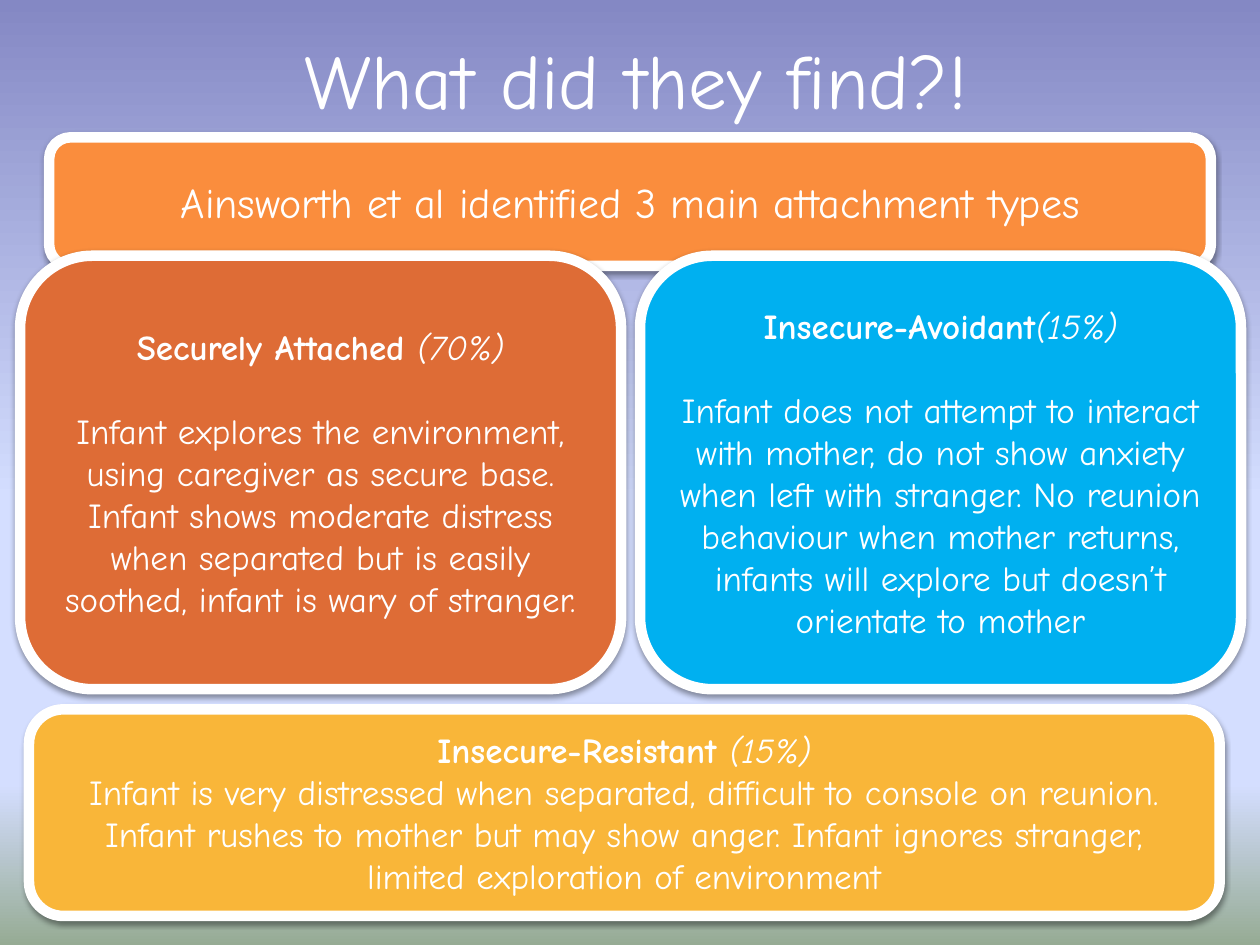
from lxml.etree import SubElement
from pptx import Presentation
from pptx.dml.color import RGBColor
from pptx.enum.shapes import MSO_SHAPE
from pptx.enum.text import MSO_ANCHOR, PP_ALIGN
from pptx.oxml.ns import qn
from pptx.util import Inches, Pt

FONT = "Comic Neue"
COLORS = {
    "white": "FFFFFF",
    "shadow": "000000",
    "banner": "FA8D3D",
    "secure": "DE6C36",
    "avoidant": "00B0F0",
    "resistant": "F9B639",
}
SKY_STOPS = [(0, "8488C4"), (53, "D4DEFF"), (83, "D4DEFF"), (100, "96AB94")]


def write_paragraph(paragraph, size, *runs):
    """Add centred white text; each run is (text, bold, italic)."""
    paragraph.alignment = PP_ALIGN.CENTER
    paragraph.font.name = FONT
    paragraph.font.size = Pt(size)
    paragraph.font.color.rgb = RGBColor.from_string(COLORS["white"])
    for text, bold, italic in runs:
        run = paragraph.add_run()
        run.text = text
        run.font.bold = bold
        run.font.italic = italic


def add_card(slide, left, top, width, height, color):
    """Add a rounded card with a thick white border and a soft shadow."""
    shape = slide.shapes.add_shape(
        MSO_SHAPE.ROUNDED_RECTANGLE,
        Inches(left), Inches(top), Inches(width), Inches(height))
    shape.fill.solid()
    shape.fill.fore_color.rgb = RGBColor.from_string(COLORS[color])
    shape.line.color.rgb = RGBColor.from_string(COLORS["white"])
    shape.line.width = Pt(6)
    shape.shadow.inherit = False
    effects = shape._element.spPr.find(qn("a:effectLst"))
    shadow = SubElement(effects, qn("a:outerShdw"), blurRad=str(Pt(3.1)),
                        dist=str(Pt(1.6)), dir="5400000", rotWithShape="0")
    shadow_color = SubElement(shadow, qn("a:srgbClr"), val=COLORS["shadow"])
    SubElement(shadow_color, qn("a:alpha"), val="38000")
    shape.text_frame.word_wrap = True
    shape.text_frame.vertical_anchor = MSO_ANCHOR.MIDDLE
    return shape


presentation = Presentation()
presentation.slide_width = Inches(10)
presentation.slide_height = Inches(7.5)
slide = presentation.slides.add_slide(presentation.slide_layouts[6])

# Sky gradient, top to bottom
background = slide.background.fill
background.gradient()
background.gradient_angle = 270
stop_list = slide._element.find(".//" + qn("a:gsLst"))
for stop in list(stop_list):
    stop_list.remove(stop)
for position, color in SKY_STOPS:
    stop = SubElement(stop_list, qn("a:gs"), pos=str(position * 1000))
    SubElement(stop, qn("a:srgbClr"), val=color)

# Title
title = slide.shapes.add_textbox(Inches(0.55), Inches(0), Inches(9), Inches(1.25))
title.text_frame.word_wrap = True
title.text_frame.vertical_anchor = MSO_ANCHOR.MIDDLE
write_paragraph(title.text_frame.paragraphs[0], 44,
                ("What did they find?!", False, False))

# Banner
banner = add_card(slide, 0.39, 1.09, 9.22, 1.02, "banner")
write_paragraph(banner.text_frame.paragraphs[0], 24,
                ("Ainsworth et al identified 3 main attachment types", False, False))

# Attachment types: box, colour, heading, share, space above description, description
attachment_types = [
    ((0.16, 2.03, 4.77, 3.44), "secure", "Securely Attached ", "(70%)", 24,
     "Infant explores the environment, using caregiver as secure base. "
     "Infant shows moderate distress when separated but is easily soothed, "
     "infant is wary of stranger."),
    ((5.08, 2.03, 4.77, 3.44), "avoidant", "Insecure-Avoidant", "(15%)", 24,
     "Infant does not attempt to interact with mother, do not show anxiety "
     "when left with stranger. No reunion behaviour when mother returns, "
     "infants will explore but doesn’t orientate to mother"),
    ((0.23, 5.63, 9.45, 1.64), "resistant", "Insecure-Resistant ", "(15%)", 0,
     "Infant is very distressed when separated, difficult to console on reunion. "
     "Infant rushes to mother but may show anger. Infant ignores stranger, "
     "limited exploration of environment"),
]
for box, color, heading, share, space, description in attachment_types:
    text_frame = add_card(slide, *box, color).text_frame
    write_paragraph(text_frame.paragraphs[0], 20,
                    (heading, True, False), (share, False, True))
    paragraph = text_frame.add_paragraph()
    paragraph.space_before = Pt(space)
    write_paragraph(paragraph, 20, (description, False, False))

presentation.save("out.pptx")
